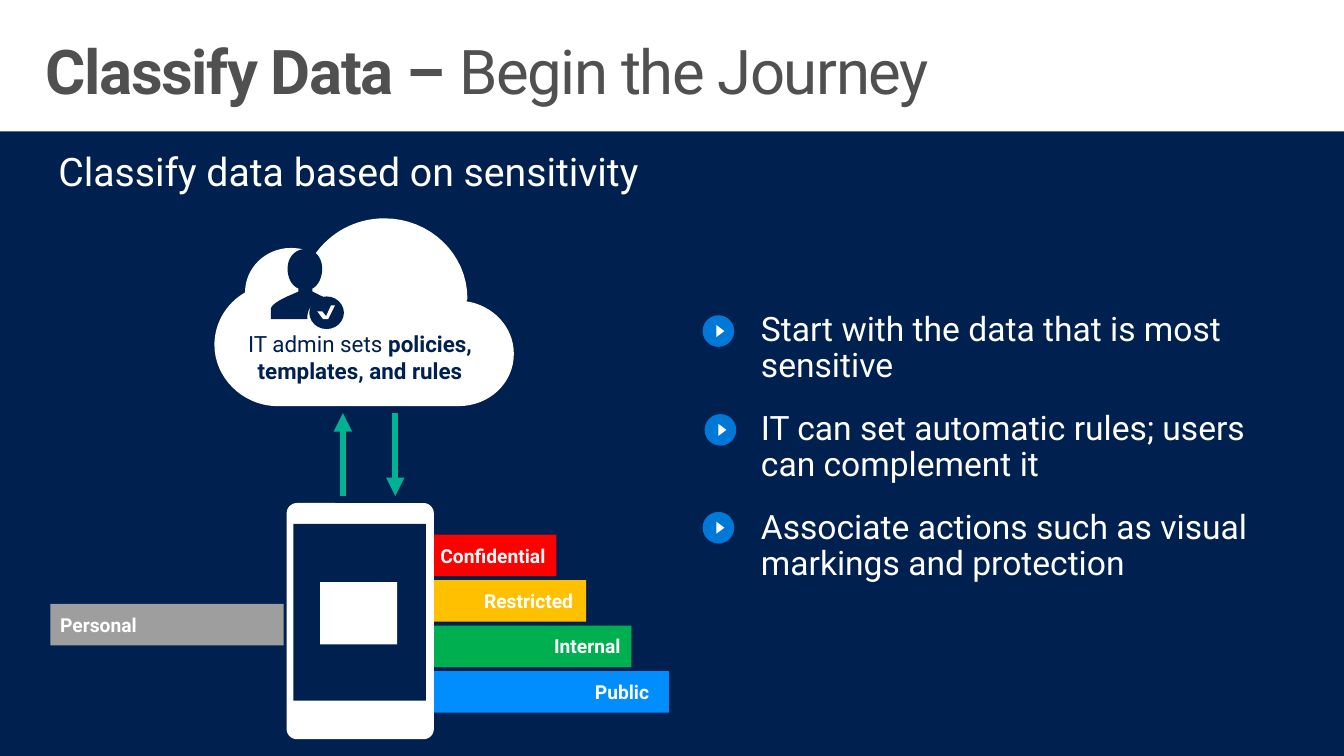
from lxml.etree import SubElement as Sub
from pptx import Presentation
from pptx.dml.color import RGBColor
from pptx.enum.shapes import MSO_CONNECTOR as Link, MSO_SHAPE as Kind
from pptx.enum.text import MSO_ANCHOR as Anchor, PP_ALIGN as Align
from pptx.oxml.ns import qn
from pptx.util import Inches, Pt

NAVY = RGBColor(0x00, 0x20, 0x50)
WHITE = RGBColor(0xFF, 0xFF, 0xFF)
GRAY = RGBColor(0x50, 0x50, 0x50)
SILVER = RGBColor(0x9E, 0x9E, 0x9E)
TEAL = RGBColor(0x00, 0xB2, 0x94)
BLUE = RGBColor(0x00, 0x78, 0xD7)
RED = RGBColor(0xFF, 0x00, 0x00)
AMBER = RGBColor(0xFF, 0xC0, 0x00)
GREEN = RGBColor(0x00, 0xB0, 0x50)
SKY = RGBColor(0x00, 0x8E, 0xFF)

CLOUD = [
    (4.72, 3.05),
    (4.72, 3.04, 4.73, 3.03, 4.73, 3.02),
    (4.73, 2.57, 4.35, 2.21, 3.89, 2.21),
    (3.59, 2.21, 3.34, 2.36, 3.19, 2.57),
    (3.12, 2.53, 3.03, 2.51, 2.94, 2.51),
    (2.69, 2.51, 2.48, 2.71, 2.48, 2.96),
    (2.29, 3.07, 2.17, 3.27, 2.17, 3.49),
    (2.17, 3.82, 2.45, 4.1, 2.79, 4.11),
    (4.64, 4.11),
    (4.95, 4.11, 5.2, 3.88, 5.2, 3.58),
    (5.2, 3.31, 4.99, 3.09, 4.72, 3.05),
]
ADMIN = [
    (3.11, 3.23),
    (3.11, 3.21),
    (3.11, 3.11, 3.19, 3.03, 3.29, 3.03),
    (3.31, 3.03, 3.32, 3.03, 3.33, 3.04),
    (3.3, 3.02, 3.27, 3, 3.24, 2.99),
    (3.16, 2.95),
    (3.16, 2.92),
    (3.22, 2.89, 3.26, 2.81, 3.26, 2.72),
    (3.26, 2.6, 3.18, 2.52, 3.09, 2.52),
    (2.99, 2.52, 2.91, 2.6, 2.91, 2.72),
    (2.91, 2.81, 2.95, 2.89, 3.02, 2.92),
    (3.02, 2.95),
    (3.02, 2.95, 3, 2.96, 2.93, 2.99),
    (2.86, 3.02, 2.74, 3.08, 2.74, 3.13),
    (2.74, 3.23),
]
CHECK = [(3.21, 3.15), (3.26, 3.15), (3.3, 3.2), (3.35, 3.09),
         (3.39, 3.09), (3.32, 3.23), (3.27, 3.23)]


def curve(start, ctrl, steps=16):
    """Return points along a cubic curve from start."""
    pts = [start, ctrl[:2], ctrl[2:4], ctrl[4:]]
    out = []
    for i in range(1, steps + 1):
        t = i / steps
        mix = ((1 - t) ** 3, 3 * t * (1 - t) ** 2, 3 * t * t * (1 - t), t ** 3)
        out.append(tuple(sum(m * p[k] for m, p in zip(mix, pts)) for k in (0, 1)))
    return out


class Deck:
    """Hold the style and the current slide."""

    font = "Roboto"

    def __init__(self, wide, high):
        self.prs = Presentation()
        self.prs.slide_width, self.prs.slide_height = Inches(wide), Inches(high)
        self.slide = self.prs.slides.add_slide(self.prs.slide_layouts[6])
        self.shapes = self.slide.shapes

    def paint(self, shape, fill):
        shape.shadow.inherit = False
        shape.fill.solid()
        shape.fill.fore_color.rgb = fill
        shape.line.fill.background()
        return shape

    def shape(self, kind, x, y, w, h, fill, turn=0):
        item = self.shapes.add_shape(kind, Inches(x), Inches(y), Inches(w), Inches(h))
        item.rotation = turn
        return self.paint(item, fill)

    def free(self, points, fill):
        pts = [points[0]]
        for seg in points[1:]:
            pts += [seg] if len(seg) == 2 else curve(pts[-1], seg)
        pts = [(Inches(x), Inches(y)) for x, y in pts]
        form = self.shapes.build_freeform(*pts[0])
        form.add_line_segments(pts[1:], close=True)
        return self.paint(form.convert_to_shape(), fill)

    def label(self, frame, paras, size, color=WHITE, bold=False, align=Align.LEFT,
              pad=(0.1, 0.05, 0.1, 0.05), anchor=Anchor.TOP, lead=None, before=0, track=0):
        """Fill a frame; each paragraph is a list of (text, bold) runs or a string."""
        frame.word_wrap = True
        frame.vertical_anchor = anchor
        (frame.margin_left, frame.margin_top,
         frame.margin_right, frame.margin_bottom) = map(Inches, pad)
        for i, runs in enumerate(paras):
            para = frame.add_paragraph() if i else frame.paragraphs[0]
            para.alignment = align
            para.line_spacing = lead
            para.space_before = Pt(before)
            for text, heavy in [(runs, bold)] if isinstance(runs, str) else runs:
                run = para.add_run()
                run.text = text
                font = run.font
                font.name, font.size, font.bold = self.font, Pt(size), heavy
                font.color.rgb = color
                if track:
                    run._r.get_or_add_rPr().set("spc", str(track * 100))

    def text(self, x, y, w, h, paras, size, **style):
        box = self.shapes.add_textbox(Inches(x), Inches(y), Inches(w), Inches(h))
        self.label(box.text_frame, paras, size, **style)

    def bar(self, x, y, w, name, fill, align, pad):
        item = self.shape(Kind.RECTANGLE, x, y, w, 0.42, fill)
        self.label(item.text_frame, [name], 14, bold=True, align=align,
                   pad=pad, anchor=Anchor.MIDDLE)

    def arrow(self, x, top, end):
        link = self.shapes.add_connector(
            Link.STRAIGHT, Inches(x), Inches(top), Inches(x), Inches(end))
        link.line.color.rgb = TEAL
        link.line.width = Pt(4.5)
        props = link._element.spPr
        Sub(props.find(qn("a:ln")), qn("a:tailEnd"), type="triangle")
        Sub(props, qn("a:effectLst"))

    def play(self, x, y):
        self.shape(Kind.OVAL, x, y, 0.32, 0.32, BLUE)
        self.shape(Kind.ISOSCELES_TRIANGLE, x + 0.12, y + 0.12, 0.12, 0.08, WHITE, 90)


def main():
    deck = Deck(13.6, 7.65)
    deck.shape(Kind.RECTANGLE, 0, 1.33, 13.6, 6.32, NAVY)
    wide = (0.16, 0.1, 0.16, 0.1)
    deck.text(0.3, 0.32, 13, 1, [[("Classify Data – ", True), ("Begin the Journey", False)]],
              44.9, color=GRAY, pad=wide, lead=0.9, track=-1)
    flow = dict(pad=wide, lead=Pt(26.1), before=20)
    deck.text(0.43, 1.5, 10.35, 0.58, ["Classify data based on sensitivity"], 28.6, **flow)

    deck.free(CLOUD, WHITE)
    deck.free(ADMIN, NAVY)
    deck.shape(Kind.OVAL, 3.13, 3, 0.35, 0.33, NAVY)
    deck.free(CHECK, WHITE)
    deck.text(1.83, 3.29, 3.63, 0.66,
              [[("IT admin sets ", False), ("policies,", True)],
               [("templates, and rules", True)]],
              16.3, color=NAVY, align=Align.CENTER)
    deck.arrow(4, 4.18, 5.02)
    deck.arrow(3.47, 5.02, 4.18)

    labels = [("Confidential", 1.29, RED, 0.11), ("Restricted", 1.59, AMBER, 0.13),
              ("Internal", 2.05, GREEN, 0.11), ("Public", 2.43, SKY, 0.2)]
    for i, (name, width, fill, gap) in enumerate(labels):
        deck.bar(4.34, 5.41 + 0.46 * i, width, name, fill, Align.RIGHT, (0, 0.05, gap, 0.05))
    deck.bar(0.51, 6.11, 2.36, "Personal", SILVER, Align.LEFT, (0.1, 0.05, 0, 0.05))

    phone = deck.shape(Kind.ROUNDED_RECTANGLE, 2.9, 5.09, 1.49, 2.39, WHITE)
    phone.adjustments[0] = 0.07
    deck.shape(Kind.RECTANGLE, 2.97, 5.3, 1.34, 1.79, NAVY)
    deck.shape(Kind.RECTANGLE, 3.24, 5.89, 0.78, 0.63, WHITE)

    deck.text(7.54, 3.06, 5.72, 3.01,
              ["Start with the data that is most sensitive",
               "IT can set automatic rules; users can complement it",
               "Associate actions such as visual markings and protection"], 24.5, **flow)
    for x, y in [(7.11, 3.19), (7.13, 4.19), (7.11, 5.18)]:
        deck.play(x, y)
    deck.prs.save("out.pptx")


if __name__ == "__main__":
    main()
